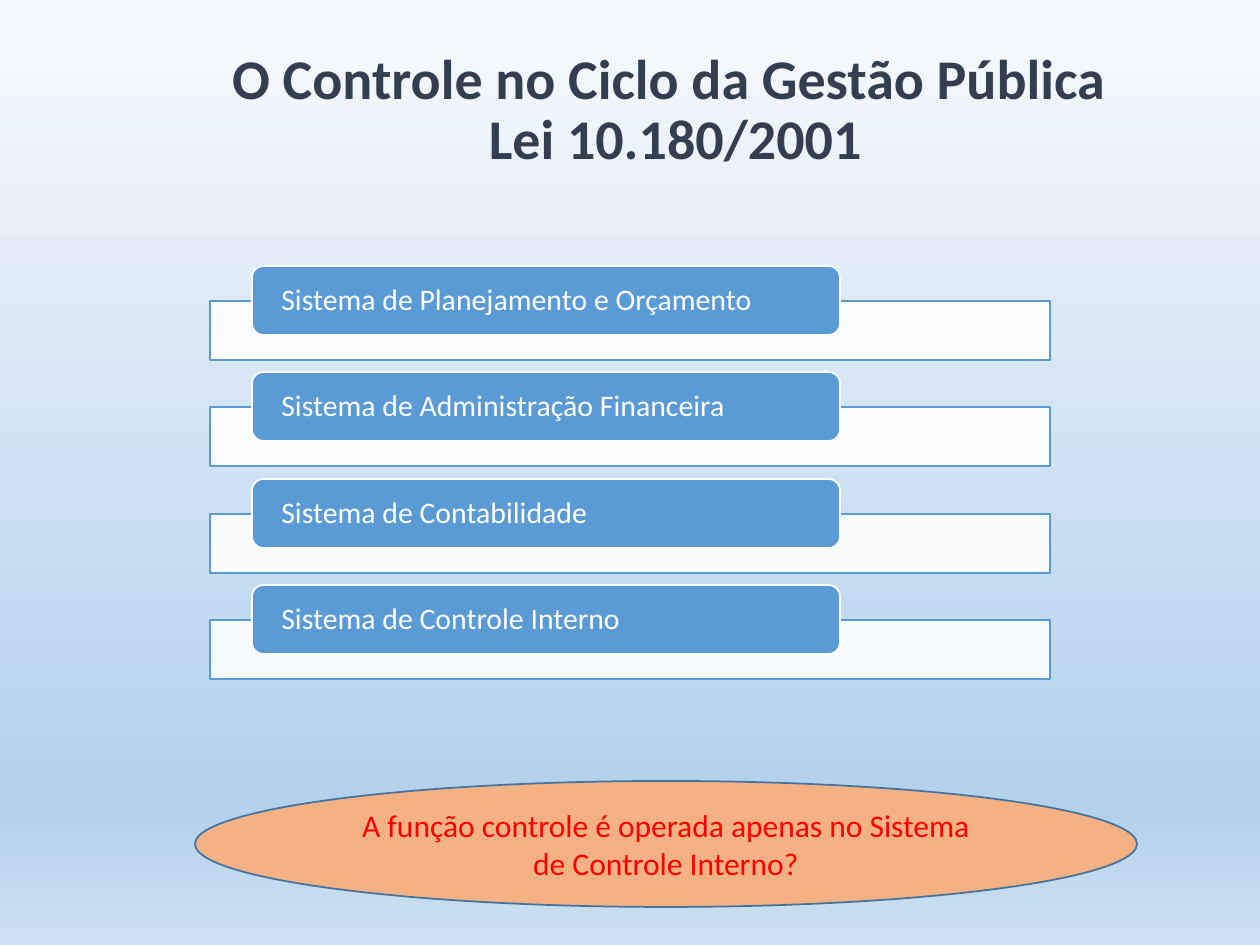
from lxml import etree
from pptx import Presentation
from pptx import util as u
from pptx.dml.color import RGBColor
from pptx.enum import shapes, text
from pptx.oxml.ns import qn

PX = 914400 / 126
FONT = "Calibri"
BLUE, WHITE = "5B9BD5", "FFFFFF"
SYSTEMS = [
    "Sistema de Planejamento e Orçamento",
    "Sistema de Administração Financeira",
    "Sistema de Contabilidade",
    "Sistema de Controle Interno",
]


def px(length):
    return u.Emu(round(length * PX))


def color(value):
    return RGBColor.from_string(value)


def set_background(slide, stops):
    """Fill the background from top to bottom; stops are (percent, colour)."""
    fill = slide.background.fill
    fill.gradient()
    fill.gradient_angle = 270
    stop_list = slide.element.find(".//" + qn("a:gsLst"))
    for stop in list(stop_list):
        stop_list.remove(stop)
    for percent, value in stops:
        stop = etree.SubElement(stop_list, qn("a:gs"), pos=str(percent * 1000))
        etree.SubElement(stop, qn("a:srgbClr"), val=value)


def add_shape(slide, kind, box, fill, line):
    shape = slide.shapes.add_shape(kind, *map(px, box))
    shape.shadow.inherit = False
    shape.fill.solid()
    shape.fill.fore_color.rgb = color(fill)
    shape.line.color.rgb = color(line)
    shape.line.width = u.Pt(1)
    return shape


def set_opacity(shape, percent):
    fill_color = shape.element.spPr.find(qn("a:solidFill"))[0]
    etree.SubElement(fill_color, qn("a:alpha"), val=str(percent * 1000))


def write(shape, content, size, value, align, bold=False, spacing=1.0, margins=None):
    """Write one paragraph; margins are (side, top and bottom) in px."""
    frame = shape.text_frame
    frame.text = content
    frame.word_wrap = True
    frame.vertical_anchor = text.MSO_ANCHOR.MIDDLE
    if margins:
        frame.margin_left = frame.margin_right = px(margins[0])
        frame.margin_top = frame.margin_bottom = px(margins[1])
    paragraph = frame.paragraphs[0]
    paragraph.alignment = align
    paragraph.line_spacing = spacing
    for run in paragraph.runs:
        run.font.name = FONT
        run.font.size = u.Pt(size)
        run.font.bold = bold
        run.font.color.rgb = color(value)


def add_title(slide, box):
    title = slide.shapes.add_textbox(*map(px, box))
    write(title, "O Controle no Ciclo da Gestão Pública \vLei 10.180/2001", 32, "333F50",
          text.PP_ALIGN.CENTER, bold=True, spacing=0.9, margins=(0, 0))
    title.text_frame.word_wrap = False


def add_system_list(slide, box, systems):
    """Stack evenly spaced bars, each with a label over its upper edge."""
    left, top, width, height = box
    label_height, bar_offset, bar_height = 69, 35, 59
    pitch = (height - bar_offset - bar_height) / (len(systems) - 1)
    for index, system in enumerate(systems):
        row_top = top + round(index * pitch)
        bar = add_shape(slide, shapes.MSO_SHAPE.RECTANGLE,
                        (left, row_top + bar_offset, width, bar_height), WHITE, BLUE)
        set_opacity(bar, 90)
        label = add_shape(slide, shapes.MSO_SHAPE.ROUNDED_RECTANGLE,
                          (left + width // 20, row_top, width * 7 // 10, label_height),
                          BLUE, WHITE)
        write(label, system, 17, WHITE, text.PP_ALIGN.LEFT, spacing=0.9, margins=(26, 0))


def add_question(slide, box):
    ellipse = add_shape(slide, shapes.MSO_SHAPE.OVAL, box, "F4B183", "43739E")
    write(ellipse, "A função controle é operada apenas no Sistema de Controle Interno?",
          18, "FF0000", text.PP_ALIGN.CENTER)


def main():
    presentation = Presentation()
    presentation.slide_width, presentation.slide_height = px(1260), px(945)
    slide = presentation.slides.add_slide(presentation.slide_layouts[6])
    set_background(slide, [(0, "F7FAFD"), (83, "B5D2EC"), (86, "B5D2EC"), (100, "CEE1F2")])
    add_title(slide, (154, 38, 1043, 147))
    add_system_list(slide, (210, 266, 840, 413), SYSTEMS)
    add_question(slide, (195, 781, 942, 126))
    presentation.save("out.pptx")


if __name__ == "__main__":
    main()
